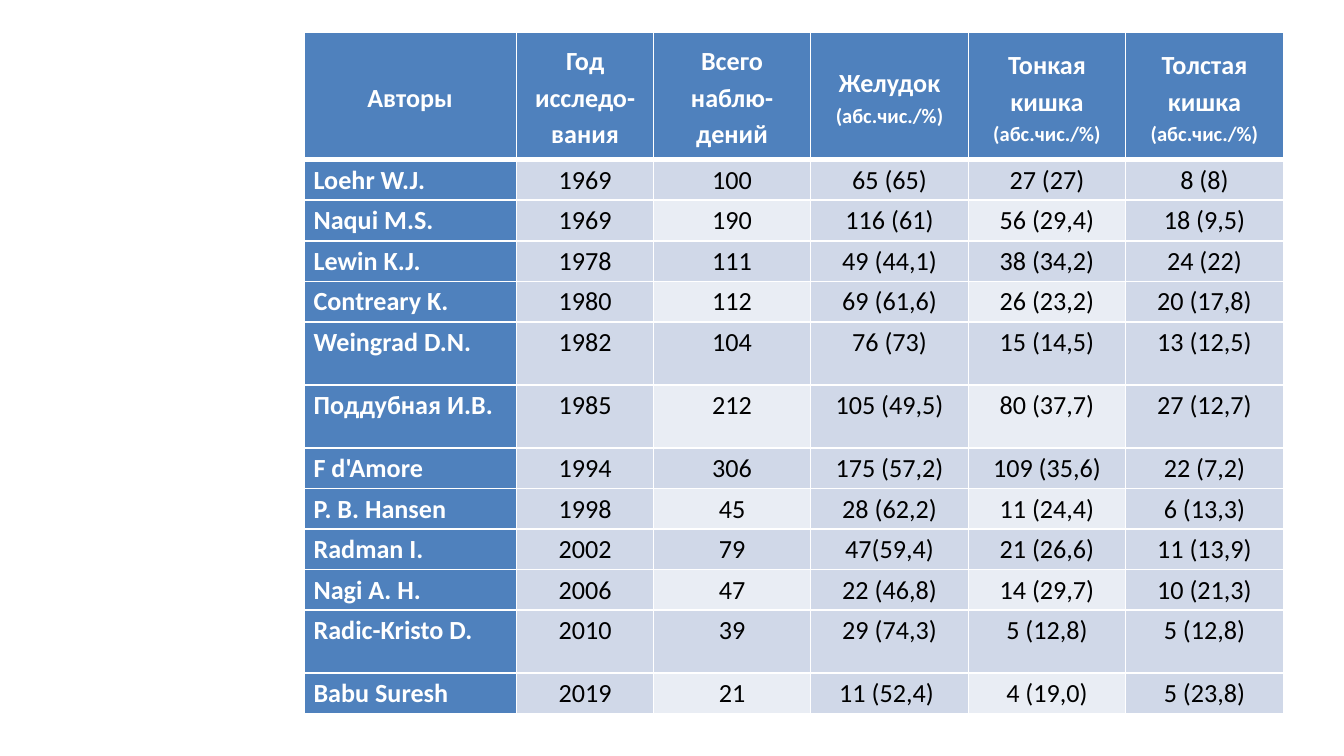
from lxml.etree import SubElement
from pptx import Presentation
from pptx.dml.color import RGBColor
from pptx.enum.text import MSO_ANCHOR, PP_ALIGN
from pptx.oxml.ns import qn
from pptx.util import Emu, Pt

PX = 9525  # EMU in one px, 96 px to the inch
FONT = "Calibri"
COLORS = {"blue": "4F81BD", "band": "D0D8E8", "light": "E9EDF4",
          "white": "FFFFFF", "black": "000000"}

COL_WIDTHS = [152, 98, 112, 113, 112, 113]
HEADER_HEIGHT, ROW_HEIGHT, TALL_HEIGHT = 91, 29, 45
TALL_AUTHORS = {"Weingrad D.N.", "Поддубная И.В.", "Radic-Kristo D."}

UNIT = "(абс.чис./%)"
HEADERS = [
    ("Авторы", ""), ("Год исследо-вания", ""), ("Всего наблю-дений", ""),
    ("Желудок ", UNIT), ("Тонкая кишка ", UNIT), ("Толстая кишка ", UNIT),
]
STUDIES = [
    ("Loehr W.J.", "1969", "100", "65 (65)", "27 (27)", "8 (8)"),
    ("Naqui M.S.", "1969", "190", "116 (61)", "56 (29,4)", "18 (9,5)"),
    ("Lewin K.J.", "1978", "111", "49 (44,1)", "38 (34,2)", "24 (22)"),
    ("Contreary K.", "1980", "112", "69 (61,6)", "26 (23,2)", "20 (17,8)"),
    ("Weingrad D.N.", "1982", "104", "76 (73)", "15 (14,5)", "13 (12,5)"),
    ("Поддубная И.В.", "1985", "212", "105 (49,5)", "80 (37,7)", "27 (12,7)"),
    ("F d'Amore", "1994", "306", "175 (57,2)", "109 (35,6)", "22 (7,2)"),
    ("P. B. Hansen", "1998", "45", "28 (62,2)", "11 (24,4)", "6 (13,3)"),
    ("Radman I.", "2002", "79", "47(59,4)", "21 (26,6)", "11 (13,9)"),
    ("Nagi A. H.", "2006", "47", "22 (46,8)", "14 (29,7)", "10 (21,3)"),
    ("Radic-Kristo D.", "2010", "39", "29 (74,3)", "5 (12,8)", "5 (12,8)"),
    ("Babu Suresh", "2019", "21", "11 (52,4) ", "4 (19,0)", "5 (23,8)"),
]


def px(n):
    return Emu(n * PX)


def rgb(name):
    return RGBColor.from_string(COLORS[name])


def add_run(p, text, size=14, color="black", bold=False):
    r = p.add_run()
    r.text = text
    r.font.name = FONT
    r.font.size = Pt(size)
    r.font.bold = bold
    r.font.color.rgb = rgb(color)


def set_borders(cell, bottom=1):
    tcPr = cell._tc.get_or_add_tcPr()
    for side, width in (("L", 1), ("R", 1), ("T", 1), ("B", bottom)):
        ln = SubElement(tcPr, qn(f"a:ln{side}"), w=str(Pt(width)))
        fill = SubElement(ln, qn("a:solidFill"))
        SubElement(fill, qn("a:srgbClr"), val=COLORS["white"])


def format_cell(cell, fill, align=PP_ALIGN.CENTER, anchor=MSO_ANCHOR.TOP, bottom=1):
    """Style the cell and return its paragraph."""
    set_borders(cell, bottom)
    cell.fill.solid()
    cell.fill.fore_color.rgb = rgb(fill)
    cell.margin_left = cell.margin_right = px(7)
    cell.margin_top = cell.margin_bottom = 0
    cell.vertical_anchor = anchor
    p = cell.text_frame.paragraphs[0]
    p.alignment = align
    p.line_spacing = 1.15
    p.space_after = Pt(10)
    return p


def fill_header(table):
    for col, (title, unit) in enumerate(HEADERS):
        p = format_cell(table.cell(0, col), "blue", anchor=MSO_ANCHOR.MIDDLE, bottom=3)
        add_run(p, title, color="white", bold=True)
        if unit:
            add_run(p, unit, size=11, color="white", bold=True)


def fill_study(table, row, study):
    author, *values = study
    p = format_cell(table.cell(row, 0), "blue", align=PP_ALIGN.LEFT)
    add_run(p, author, color="white", bold=True)
    for col, value in enumerate(values, 1):
        # Lighter cells where an even row meets an even column
        light = row % 2 == 0 and col % 2 == 0
        p = format_cell(table.cell(row, col), "light" if light else "band")
        add_run(p, value)


def add_study_table(s):
    heights = [HEADER_HEIGHT] + [
        TALL_HEIGHT if study[0] in TALL_AUTHORS else ROW_HEIGHT for study in STUDIES]
    table = s.shapes.add_table(len(heights), len(COL_WIDTHS), px(217), px(23),
                               px(sum(COL_WIDTHS)), px(sum(heights))).table
    table.horz_banding = False
    for column, width in zip(table.columns, COL_WIDTHS):
        column.width = px(width)
    for row, height in zip(table.rows, heights):
        row.height = px(height)
    fill_header(table)
    for row, study in enumerate(STUDIES, 1):
        fill_study(table, row, study)


def main():
    prs = Presentation()
    prs.slide_width, prs.slide_height = px(960), px(540)
    s = prs.slides.add_slide(prs.slide_layouts[6])
    add_study_table(s)
    prs.save("out.pptx")


if __name__ == "__main__":
    main()
